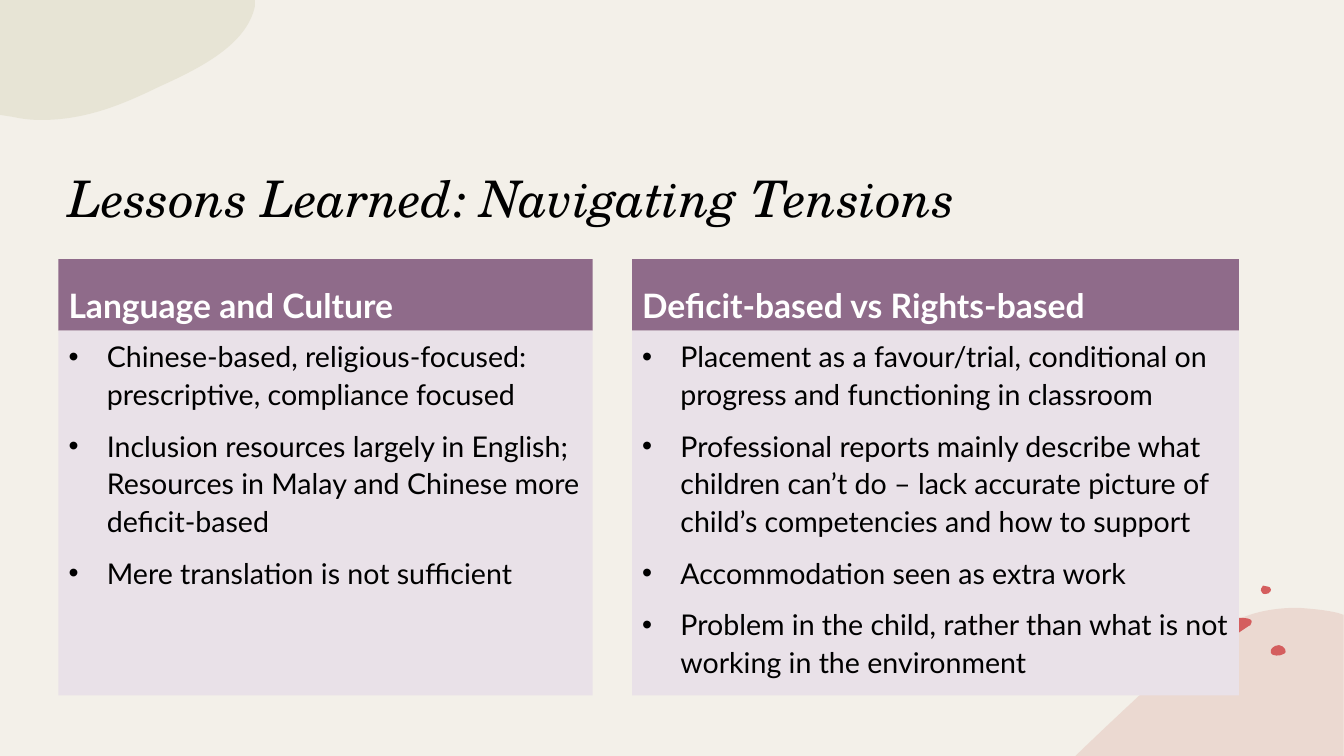
from dataclasses import dataclass
from typing import Any

from lxml.etree import SubElement
from pptx import Presentation
from pptx.dml.color import RGBColor
from pptx.enum.text import MSO_ANCHOR as Anchor, MSO_AUTO_SIZE as AutoSize, PP_ALIGN as Align
from pptx.oxml.ns import qn
from pptx.util import Emu, Pt

PX = 9144  # EMU per px, 100 px to the inch
BULLET_INDENT = 38

CREAM = RGBColor(0xF3, 0xF0, 0xE9)
BLUSH = RGBColor(0xE5, 0xC4, 0xBA)
CORAL = RGBColor(0xD4, 0x5E, 0x5E)
SAGE = RGBColor(0xDC, 0xD9, 0xC3)
PLUM = RGBColor(0x8F, 0x6B, 0x8A)
LILAC = RGBColor(0xE9, 0xE1, 0xE8)
BLACK = RGBColor(0, 0, 0)
WHITE = RGBColor(0xFF, 0xFF, 0xFF)

TITLE_FONT = {"name": "TeX Gyre Schola", "size": Pt(36), "italic": True, "bold": False}
HEADING_FONT = {"name": "Lato", "size": Pt(24), "bold": True}
LIST_FONT = {"name": "Lato", "size": Pt(20.4), "bold": False}


@dataclass(frozen=True)
class Blob:
    color: RGBColor
    opacity: int
    start: tuple[int, int]
    steps: list[tuple[int, ...]]  # 2 numbers: line end; 6: two controls and curve end


@dataclass(frozen=True)
class Column:
    left: int
    width: int
    heading: str
    lessons: list[str]


BLOBS = [
    # Bottom right hill
    Blob(BLUSH, 50, (1288, 603), [
        (1301, 604, 1314, 605, 1327, 608), (1333, 610), (1333, 750), (1067, 750),
        (1068, 749), (1102, 716, 1137, 684, 1169, 654),
        (1191, 632, 1214, 619, 1237, 611), (1254, 605, 1271, 603, 1288, 603)]),
    # Coral specks
    Blob(CORAL, 100, (1269, 640), [
        (1271, 640, 1274, 642, 1275, 644), (1276, 646, 1276, 648, 1273, 649),
        (1270, 651, 1262, 651, 1261, 648), (1260, 646, 1261, 644, 1262, 643),
        (1264, 641, 1266, 640, 1269, 640)]),
    Blob(CORAL, 100, (1251, 586), [
        (1251, 586, 1251, 582, 1253, 581), (1255, 581, 1256, 581, 1258, 582),
        (1259, 582, 1261, 583, 1261, 585), (1261, 586, 1260, 588, 1259, 588),
        (1259, 588, 1259, 589, 1257, 589), (1256, 589, 1254, 590, 1253, 589),
        (1252, 587, 1251, 587, 1251, 586)]),
    Blob(CORAL, 100, (1228, 613), [
        (1234, 613, 1245, 613, 1241, 619), (1241, 620, 1240, 621, 1239, 621),
        (1236, 623, 1233, 625, 1230, 627), (1229, 628, 1228, 629, 1227, 628),
        (1227, 628, 1226, 627, 1226, 627), (1224, 623, 1223, 620, 1223, 616),
        (1223, 615, 1223, 614, 1224, 613), (1224, 613, 1225, 613, 1225, 613),
        (1226, 613, 1227, 613, 1228, 613)]),
    # Top left corner
    Blob(SAGE, 50, (0, 0), [
        (253, 0), (253, 6), (245, 44, 200, 67, 158, 86),
        (123, 103, 86, 119, 41, 119), (31, 119, 22, 118, 13, 116), (0, 114), (0, 0)]),
]

COLUMNS = [
    Column(58, 530, "Language and Culture", [
        "Chinese-based, religious-focused: prescriptive, compliance focused",
        "Inclusion resources largely in English;\n"
        "Resources in Malay and Chinese more deficit-based",
        "Mere translation is not sufficient"]),
    Column(627, 602, "Deficit-based vs Rights-based", [
        "Placement as a favour/trial, conditional on progress and functioning in classroom",
        "Professional reports mainly describe what children can’t do – lack accurate "
        "picture of child’s competencies and how to support",
        "Accommodation seen as extra work",
        "Problem in the child, rather than what is not working in the environment"]),
]


def px(length: int) -> Emu:
    return Emu(length * PX)


def draw_blob(shapes: Any, blob: Blob) -> None:
    builder = shapes.build_freeform(*blob.start, scale=PX)
    points = [point for step in blob.steps for point in zip(step[::2], step[1::2])]
    builder.add_line_segments(points, close=True)
    shape = builder.convert_to_shape()
    # Join each pair of controls and its end into one curve
    segments = iter(list(shape.element.iter(qn("a:lnTo"))))
    for step in blob.steps:
        segment = next(segments)
        if len(step) == 6:
            segment.tag = qn("a:cubicBezTo")
            for extra in (next(segments), next(segments)):
                segment.append(extra[0])
                extra.getparent().remove(extra)
    shape.shadow.inherit = False
    shape.line.fill.background()
    shape.fill.solid()
    shape.fill.fore_color.rgb = blob.color
    if blob.opacity < 100:
        tint = next(shape.element.spPr.iter(qn("a:srgbClr")))
        SubElement(tint, qn("a:alpha"), val=str(blob.opacity * 1000))


def fill_holder(holder: Any, box: tuple[int, int, int, int], texts: list[str],
                font: dict[str, Any], color: RGBColor, anchor: Anchor,
                back: RGBColor | None = None, spacing: float = 1.0,
                bulleted: bool = False) -> None:
    holder.left, holder.top, holder.width, holder.height = map(px, box)
    if back is not None:
        holder.fill.solid()
        holder.fill.fore_color.rgb = back
    frame = holder.text_frame
    frame_format = {"word_wrap": True, "auto_size": AutoSize.NONE, "vertical_anchor": anchor}
    for key, value in frame_format.items():
        setattr(frame, key, value)
    for i, text in enumerate(texts):
        paragraph = frame.add_paragraph() if i else frame.paragraphs[0]
        paragraph.text = text
        paragraph_format = {"alignment": Align.LEFT, "line_spacing": spacing,
                            "space_before": Pt(10 if i else 0)}
        for key, value in paragraph_format.items():
            setattr(paragraph, key, value)
        if bulleted:
            properties = paragraph._p.get_or_add_pPr()
            properties.set("marL", str(px(BULLET_INDENT)))
            properties.set("indent", str(px(-BULLET_INDENT)))
            SubElement(properties, qn("a:buFont"), typeface="Arial")
            SubElement(properties, qn("a:buChar"), char="•")
        for run in paragraph.runs:
            for key, value in font.items():
                setattr(run.font, key, value)
            run.font.color.rgb = color
    # Bring the text in front of the blobs
    holder.element.getparent().append(holder.element)


def main() -> None:
    deck = Presentation()
    deck.slide_width, deck.slide_height = Emu(12192000), px(750)
    slide = deck.slides.add_slide(deck.slide_layouts.get_by_name("Comparison"))
    slide.background.fill.solid()
    slide.background.fill.fore_color.rgb = CREAM

    # Backdrop
    for blob in BLOBS:
        draw_blob(slide.shapes, blob)

    # Title
    title, *panels = list(slide.placeholders)
    fill_holder(title, (58, 86, 1102, 145), ["Lessons Learned: Navigating Tensions"],
                TITLE_FONT, BLACK, Anchor.BOTTOM)

    # Two columns, each a heading over a list
    for column, heading, lessons in zip(COLUMNS, panels[::2], panels[1::2]):
        fill_holder(heading, (column.left, 257, column.width, 71), [column.heading],
                    HEADING_FONT, WHITE, Anchor.BOTTOM, PLUM, 1.1)
        fill_holder(lessons, (column.left, 328, column.width, 362), column.lessons,
                    LIST_FONT, BLACK, Anchor.TOP, LILAC, 1.1, bulleted=True)

    deck.save("out.pptx")


if __name__ == "__main__":
    main()
